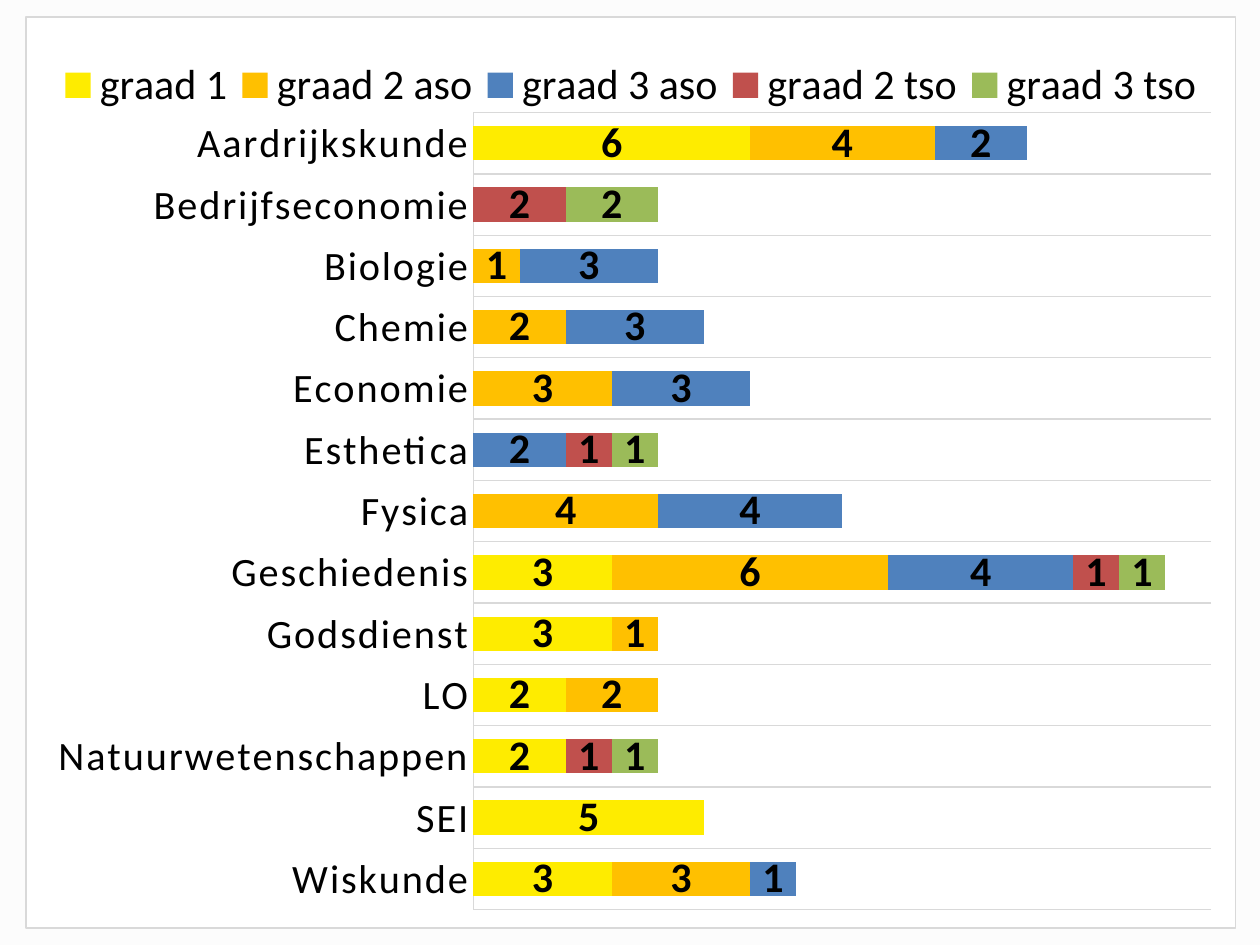
"""Build a slide with a stacked bar chart of counts per school subject and grade."""
from lxml.etree import SubElement
from pptx import Presentation
from pptx.chart.data import CategoryChartData
from pptx.dml.color import RGBColor
from pptx.enum.chart import XL_CHART_TYPE, XL_LABEL_POSITION, XL_LEGEND_POSITION, XL_TICK_LABEL_POSITION, XL_TICK_MARK
from pptx.oxml import parse_xml
from pptx.oxml.ns import nsdecls, qn
from pptx.util import Cm, Pt


def rgb(color):
    return RGBColor.from_string(color)


def set_layout(parent, index, inner, **box):
    for old in parent.findall(qn("c:layout")):
        parent.remove(old)
    layout = parent.makeelement(qn("c:layout"))
    parent.insert(index, layout)
    manual = SubElement(layout, qn("c:manualLayout"))
    if inner:
        SubElement(manual, qn("c:layoutTarget")).set("val", "inner")
    for mode in ("xMode", "yMode"):
        SubElement(manual, qn(f"c:{mode}")).set("val", "edge")
    for key, value in box.items():
        SubElement(manual, qn(f"c:{key}")).set("val", str(value))


subjects = ["Wiskunde", "SEI", "Natuurwetenschappen", "LO", "Godsdienst", "Geschiedenis", "Fysica",
            "Esthetica", "Economie", "Chemie", "Biologie", "Bedrijfseconomie", "Aardrijkskunde"]
grades = [
    ("graad 1", "FEEC00", [3, 5, 2, 2, 3, 3, None, None, None, None, None, None, 6]),
    ("graad 2 aso", "FFC000", [3, None, None, 2, 1, 6, 4, None, 3, 2, 1, None, 4]),
    ("graad 3 aso", "4F81BD", [1, None, None, None, None, 4, 4, 2, 3, 3, 3, None, 2]),
    ("graad 2 tso", "C0504D", [None, None, 1, None, None, 1, None, 1, None, None, None, 2, None]),
    ("graad 3 tso", "9BBB59", [None, None, 1, None, None, 1, None, 1, None, None, None, 2, None]),
]

prs = Presentation()
prs.slide_width, prs.slide_height = Cm(25.4), Cm(19.05)
s = prs.slides.add_slide(prs.slide_layouts[6])
s.background.fill.solid()
s.background.fill.fore_color.rgb = rgb("FCFCFC")

data = CategoryChartData()
data.categories = subjects
for name, color, values in grades:
    data.add_series(name, values)
chart = s.shapes.add_chart(XL_CHART_TYPE.BAR_STACKED, Cm(0.51), Cm(0.33), Cm(24.41), Cm(18.39), data).chart
chart.has_title = False
chart.has_legend = True
chart.legend.position = XL_LEGEND_POSITION.TOP
chart.legend.include_in_layout = False

cat = chart.category_axis
cat.major_tick_mark = cat.minor_tick_mark = XL_TICK_MARK.NONE
cat.tick_label_position = XL_TICK_LABEL_POSITION.NEXT_TO_AXIS
cat.has_major_gridlines = True
for line in (cat.format.line, cat.major_gridlines.format.line):
    line.color.rgb = rgb("D9D9D9")
    line.width = Pt(0.75)
val = chart.value_axis
val.minimum_scale, val.maximum_scale = 0, 16
val.has_major_gridlines = False
val.visible = False

plot = chart.plots[0]
plot.gap_width, plot.overlap = 79, 100
plot.vary_by_categories = False
fonts = [(chart.font, 10), (cat.tick_labels.font, 23), (chart.legend.font, 24)]
for series, (name, color, values) in zip(plot.series, grades):
    series.format.fill.solid()
    series.format.fill.fore_color.rgb = rgb(color)
    labels = series.data_labels
    labels.show_value = True
    labels.position = XL_LABEL_POSITION.CENTER
    labels.font.bold = True
    fonts.append((labels.font, 24))
for font, size in fonts:
    font.name = "Calibri"
    font.size = Pt(size)
    font.color.rgb = rgb("000000")

for props in cat._element.iter(qn("a:defRPr")):
    props.set("spc", "100")
space = chart._chartSpace
set_layout(space.find(f".//{qn('c:plotArea')}"), 0, True, x=0.37, y=0.105, w=0.61, h=0.875)
set_layout(chart.legend._element, 1, False, x=0.02, y=0.03, w=0.96, h=0.09)
space.find(qn("c:chart")).addnext(parse_xml(
    f'<c:spPr {nsdecls("c", "a")}><a:solidFill><a:srgbClr val="FFFFFF"/></a:solidFill>'
    '<a:ln w="9525"><a:solidFill><a:srgbClr val="D9D9D9"/></a:solidFill></a:ln></c:spPr>'))

prs.save("out.pptx")
